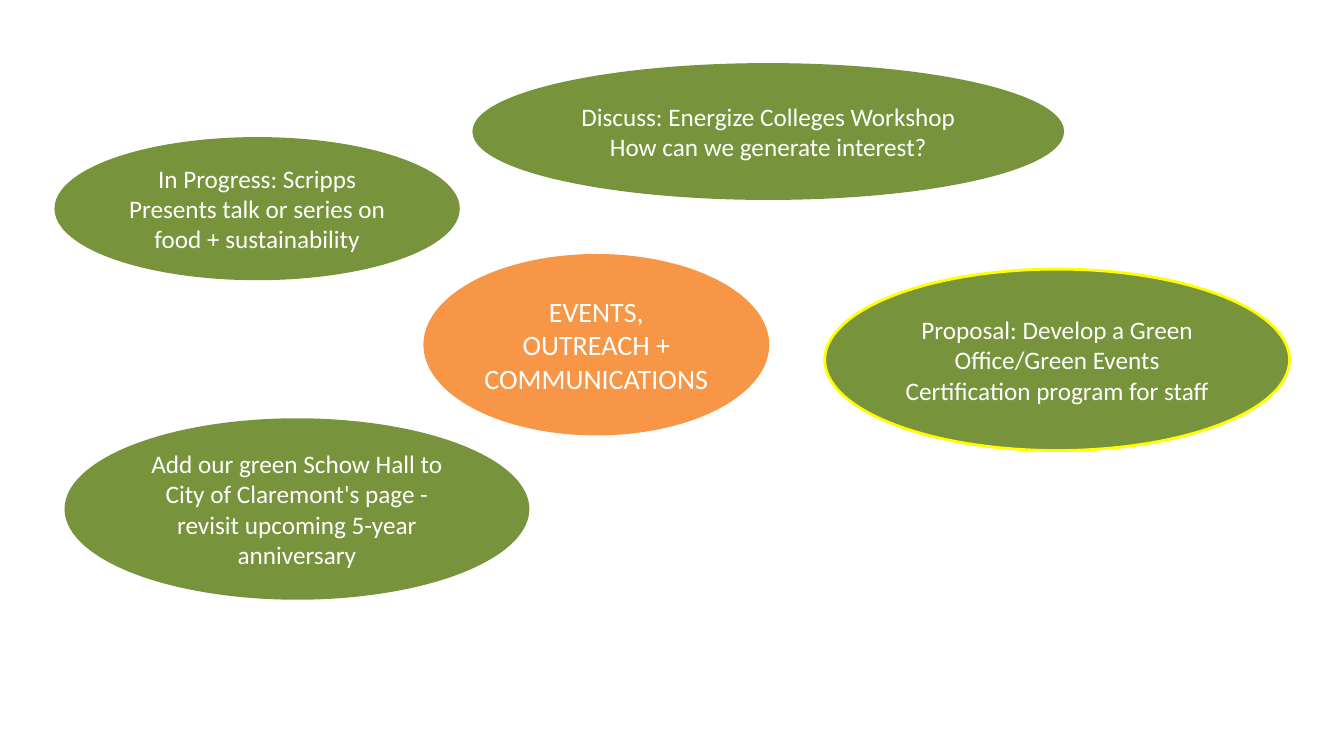
"""Build a slide of idea bubbles around events, outreach and communications."""
from pptx import Presentation
from pptx.dml.color import RGBColor
from pptx.enum.shapes import MSO_SHAPE as Shape
from pptx.enum.text import MSO_ANCHOR as Anchor, PP_ALIGN as Align
from pptx.util import Pt

PX = 9144
ORANGE = RGBColor(0xF7, 0x96, 0x46)
GREEN = RGBColor(0x77, 0x93, 0x3C)
YELLOW = RGBColor(0xFF, 0xFF, 0x00)
WHITE = RGBColor(0xFF, 0xFF, 0xFF)

IDEAS = [
    ((54, 136, 402, 142), None,
     "In Progress: Scripps Presents talk or series on food + sustainability"),
    ((470, 64, 584, 133), GREEN,
     "Discuss: Energize Colleges Workshop\nHow can we generate interest?"),
    ((818, 267, 461, 180), YELLOW,
     "Proposal: Develop a Green Office/Green Events Certification program for staff"),
    ((64, 415, 461, 180), None,
     "Add our green Schow Hall to City of Claremont's page - "
     "revisit upcoming 5-year anniversary"),
]


def add_bubble(page, place, text, fill, outline=None, size=18):
    bubble = page.shapes.add_shape(Shape.OVAL, *(PX * length for length in place))
    bubble.shadow.inherit = False
    bubble.fill.solid()
    bubble.fill.fore_color.rgb = fill
    if outline is None:
        bubble.line.fill.background()
    else:
        bubble.line.color.rgb = outline
        bubble.line.width = Pt(2)
    frame = bubble.text_frame
    frame.word_wrap = True
    frame.vertical_anchor = Anchor.MIDDLE
    frame.text = text
    for para in frame.paragraphs:
        para.alignment = Align.CENTER
        para.font.name = "Calibri"
        para.font.size = Pt(size)
        para.font.color.rgb = WHITE


def main():
    deck = Presentation()
    deck.slide_width, deck.slide_height = 1333 * PX, 750 * PX
    page = deck.slides.add_slide(deck.slide_layouts[6])
    add_bubble(page, (420, 252, 343, 180), "EVENTS, OUTREACH + COMMUNICATIONS",
               ORANGE, size=20)
    for place, outline, text in IDEAS:
        add_bubble(page, place, text, GREEN, outline)
    deck.save("out.pptx")


if __name__ == "__main__":
    main()
